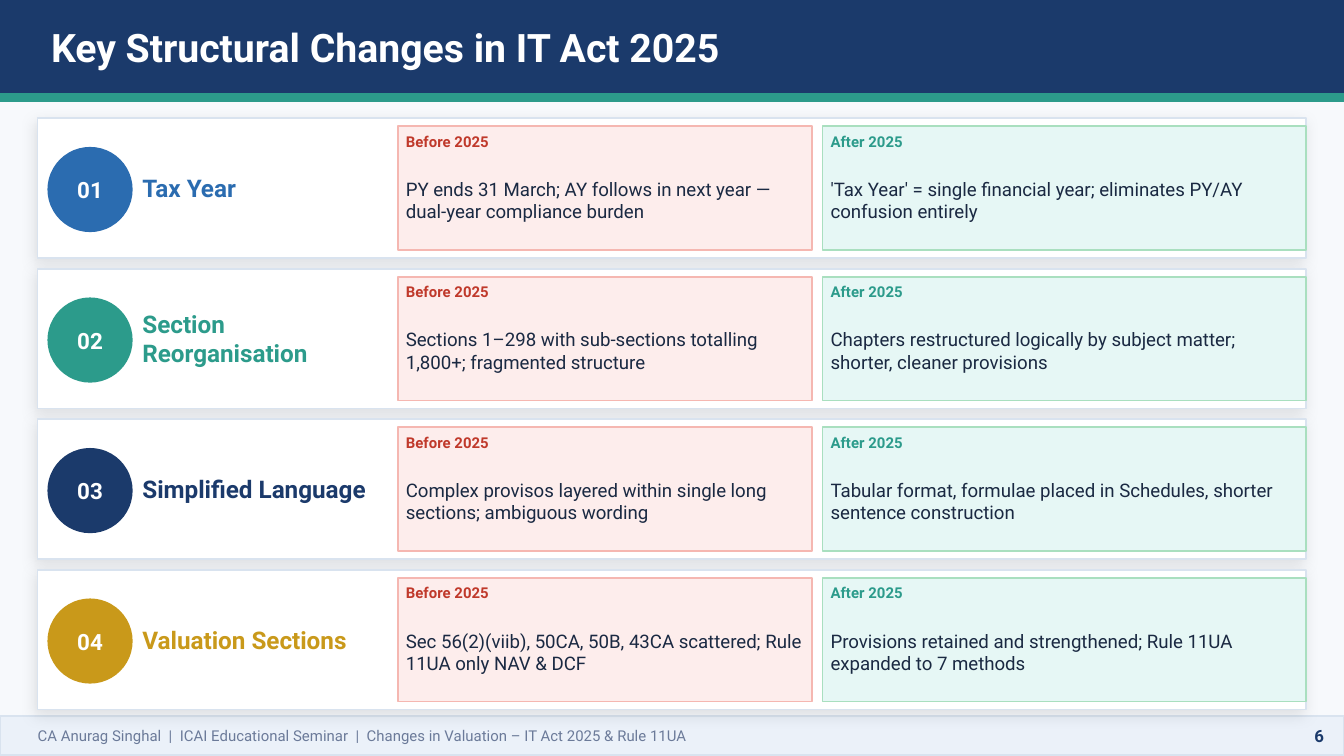
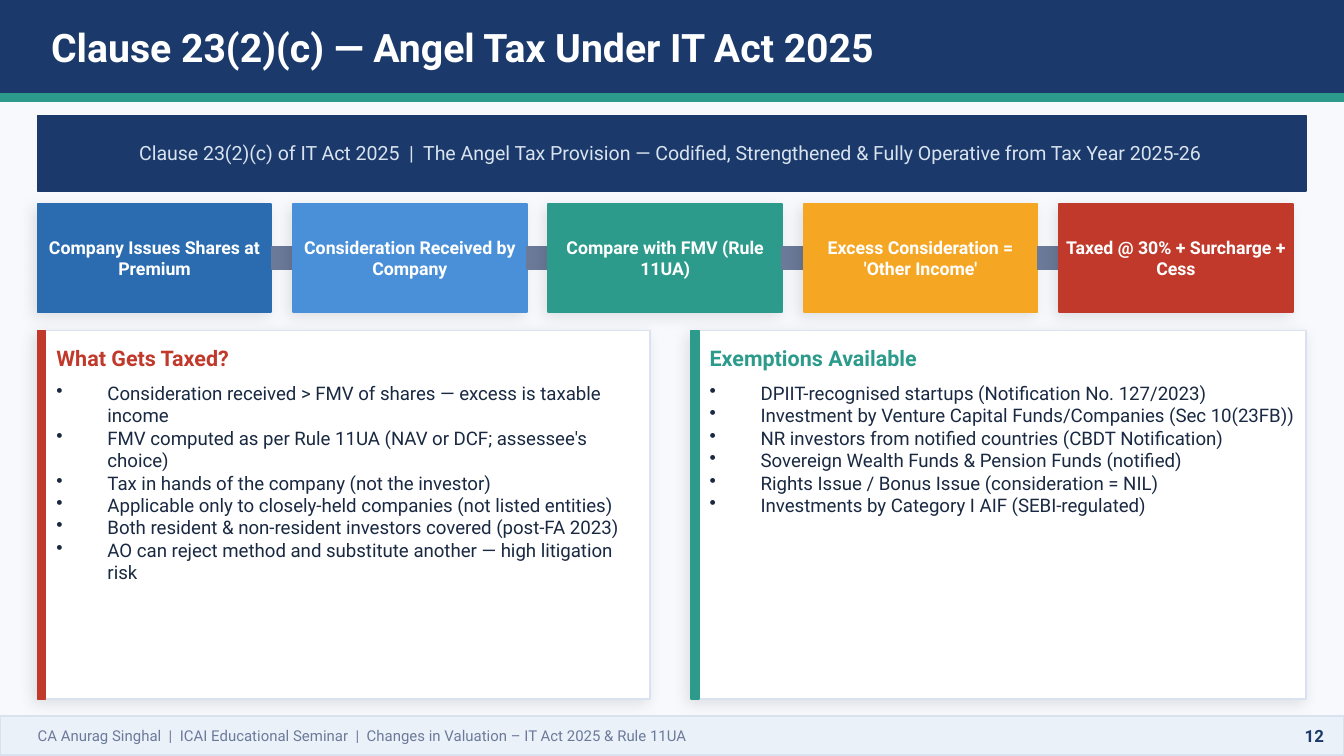
from dataclasses import dataclass

from lxml.etree import SubElement
from pptx import Presentation
from pptx.dml.color import RGBColor
from pptx.enum.shapes import MSO_SHAPE as Preset
from pptx.enum.text import MSO_ANCHOR as Anchor, PP_ALIGN as Align
from pptx.oxml.ns import qn
from pptx.util import Pt

# Shared style
FONT = "Roboto"
NAVY = RGBColor(0x1B, 0x3A, 0x6B)
BLUE = RGBColor(0x2B, 0x6C, 0xB0)
SKY = RGBColor(0x4A, 0x90, 0xD9)
TEAL = RGBColor(0x2C, 0x9B, 0x8B)
GOLD = RGBColor(0xC9, 0x99, 0x1A)
ORANGE = RGBColor(0xF5, 0xA6, 0x23)
RED = RGBColor(0xC0, 0x39, 0x2B)
INK = RGBColor(0x1A, 0x29, 0x42)
GREY = RGBColor(0x6B, 0x7A, 0x99)
BORDER = RGBColor(0xD9, 0xE3, 0xEF)
FOOTER_FILL = RGBColor(0xEB, 0xF1, 0xF9)
BACKGROUND = RGBColor(0xF7, 0xF9, 0xFC)
WHITE = RGBColor(0xFF, 0xFF, 0xFF)
PINK = RGBColor(0xFD, 0xED, 0xEC)
PINK_BORDER = RGBColor(0xF5, 0xB7, 0xB1)
MINT = RGBColor(0xE6, 0xF7, 0xF5)
MINT_BORDER = RGBColor(0xA9, 0xDF, 0xBF)

SLIDE_WIDTH, SLIDE_HEIGHT = 720, 405
MARGIN = 20.16
CONTENT_WIDTH = SLIDE_WIDTH - 2 * MARGIN
FOOTER = "CA Anurag Singhal  |  ICAI Educational Seminar  |  Changes in Valuation – IT Act 2025 & Rule 11UA"


@dataclass
class Box:
    """A rectangle in points."""
    left: float
    top: float
    width: float
    height: float

    def lengths(self) -> tuple:
        return Pt(self.left), Pt(self.top), Pt(self.width), Pt(self.height)


@dataclass
class Change:
    title: str
    color: RGBColor
    before: str
    after: str


@dataclass
class ComparisonColumn:
    label: str
    left: float
    width: float
    fill: RGBColor
    border: RGBColor
    color: RGBColor


@dataclass
class Step:
    text: str
    color: RGBColor


@dataclass
class ListPanel:
    title: str
    color: RGBColor
    left: float
    width: float
    items: list


CHANGES = [
    Change("Tax Year", BLUE,
           "PY ends 31 March; AY follows in next year — dual-year compliance burden",
           "'Tax Year' = single financial year; eliminates PY/AY confusion entirely"),
    Change("Section Reorganisation", TEAL,
           "Sections 1–298 with sub-sections totalling 1,800+; fragmented structure",
           "Chapters restructured logically by subject matter; shorter, cleaner provisions"),
    Change("Simplified Language", NAVY,
           "Complex provisos layered within single long sections; ambiguous wording",
           "Tabular format, formulae placed in Schedules, shorter sentence construction"),
    Change("Valuation Sections", GOLD,
           "Sec 56(2)(viib), 50CA, 50B, 43CA scattered; Rule 11UA only NAV & DCF",
           "Provisions retained and strengthened; Rule 11UA expanded to 7 methods"),
]
BEFORE = ComparisonColumn("Before 2025", 213.12, 221.76, PINK, PINK_BORDER, RED)
AFTER = ComparisonColumn("After 2025", 440.64, 259.2, MINT, MINT_BORDER, TEAL)

STEPS = [
    Step("Company Issues Shares at Premium", BLUE),
    Step("Consideration Received by Company", SKY),
    Step("Compare with FMV (Rule 11UA)", TEAL),
    Step("Excess Consideration = 'Other Income'", ORANGE),
    Step("Taxed @ 30% + Surcharge + Cess", RED),
]
LIST_PANELS = [
    ListPanel("What Gets Taxed?", RED, MARGIN, 328.32, [
        "Consideration received > FMV of shares — excess is taxable income",
        "FMV computed as per Rule 11UA (NAV or DCF; assessee's choice)",
        "Tax in hands of the company (not the investor)",
        "Applicable only to closely-held companies (not listed entities)",
        "Both resident & non-resident investors covered (post-FA 2023)",
        "AO can reject method and substitute another — high litigation risk",
    ]),
    ListPanel("Exemptions Available", TEAL, 370.08, 329.76, [
        "DPIIT-recognised startups (Notification No. 127/2023)",
        "Investment by Venture Capital Funds/Companies (Sec 10(23FB))",
        "NR investors from notified countries (CBDT Notification)",
        "Sovereign Wealth Funds & Pension Funds (notified)",
        "Rights Issue / Bonus Issue (consideration = NIL)",
        "Investments by Category I AIF (SEBI-regulated)",
    ]),
]


def add_soft_shadow(shape) -> None:
    effects = shape._element.spPr.find(qn("a:effectLst"))
    shadow = SubElement(effects, qn("a:outerShdw"), blurRad=str(Pt(8)), dist=str(Pt(3)),
                        dir=str(135 * 60000), algn="bl", rotWithShape="0")
    color = SubElement(shadow, qn("a:srgbClr"), val="000000")
    SubElement(color, qn("a:alpha"), val="10000")


def add_block(slide, box: Box, fill: RGBColor, border: RGBColor | None = None,
              preset=Preset.RECTANGLE, shadow: bool = False) -> None:
    shape = slide.shapes.add_shape(preset, *box.lengths())
    shape.fill.solid()
    shape.fill.fore_color.rgb = fill
    shape.line.color.rgb = border or fill
    shape.line.width = Pt(1)
    shape.shadow.inherit = False
    if shadow:
        add_soft_shadow(shape)


def add_bullet(paragraph, indent: float = 27.36) -> None:
    properties = paragraph._p.get_or_add_pPr()
    properties.set("marL", str(Pt(indent)))
    properties.set("indent", str(-Pt(indent)))
    SubElement(properties, qn("a:buChar"), char="•")


def add_text(slide, box: Box, *lines: str, size: float, color: RGBColor, bold: bool = False,
             align=Align.LEFT, anchor=Anchor.MIDDLE, bullets: bool = False) -> None:
    frame = slide.shapes.add_textbox(*box.lengths()).text_frame
    frame.word_wrap = True
    frame.vertical_anchor = anchor
    frame.margin_left = frame.margin_top = frame.margin_right = frame.margin_bottom = 0
    for index, line in enumerate(lines):
        paragraph = frame.add_paragraph() if index else frame.paragraphs[0]
        paragraph.alignment = align
        if bullets:
            add_bullet(paragraph)
        run = paragraph.add_run()
        run.text = line
        run.font.name = FONT
        run.font.size = Pt(size)
        run.font.bold = bold
        run.font.color.rgb = color


def add_base_slide(presentation, title: str, number: int):
    """Background, title band and footer shared by every slide."""
    slide = presentation.slides.add_slide(presentation.slide_layouts[6])
    slide.background.fill.solid()
    slide.background.fill.fore_color.rgb = BACKGROUND
    add_block(slide, Box(0, 0, SLIDE_WIDTH, 50.4), NAVY)
    add_block(slide, Box(0, 50.4, SLIDE_WIDTH, 3.6), TEAL)
    add_text(slide, Box(27.36, 0, 518.4, 50.4), title, size=21, color=WHITE, bold=True)
    top, height = 383.76, 20.88
    add_block(slide, Box(0, top, SLIDE_WIDTH, height), FOOTER_FILL, BORDER)
    add_text(slide, Box(MARGIN, top, 633.6, height), FOOTER, size=8, color=GREY)
    add_text(slide, Box(669.6, top, 39.6, height), str(number), size=9, color=NAVY,
             bold=True, align=Align.RIGHT)
    return slide


def draw_comparison(slide, column: ComparisonColumn, top: float, text: str) -> None:
    padding = 4.32
    left, width = column.left + padding, column.width - 2 * padding
    add_block(slide, Box(column.left, top, column.width, 66.24), column.fill, column.border)
    add_text(slide, Box(left, top, width, 15.84), column.label, size=8,
             color=column.color, bold=True)
    add_text(slide, Box(left, top + 14.4, width, 50.4), text, size=10, color=INK)


def draw_change(slide, index: int, change: Change) -> None:
    top = 63.36 + index * 80.64
    add_block(slide, Box(MARGIN, top, CONTENT_WIDTH, 74.88), WHITE, BORDER, shadow=True)
    badge = Box(25.92, top + 15.84, 44.64, 44.64)
    add_block(slide, badge, change.color, preset=Preset.OVAL)
    add_text(slide, badge, f"{index + 1:02}", size=12, color=WHITE, bold=True, align=Align.CENTER)
    inner_top = top + 4.32
    add_text(slide, Box(76.32, inner_top, 131.04, 66.24), change.title, size=13,
             color=change.color, bold=True)
    draw_comparison(slide, BEFORE, inner_top, change.before)
    draw_comparison(slide, AFTER, inner_top, change.after)


def draw_steps(slide) -> None:
    top, width, height, gap = 109.44, 125.28, 57.6, 11.52
    for index, step in enumerate(STEPS):
        box = Box(MARGIN + index * (width + gap), top, width, height)
        if index:
            add_block(slide, Box(box.left - gap, top + (height - gap) / 2, gap, gap), GREY)
        add_block(slide, box, step.color, shadow=True)
        add_text(slide, box, step.text, size=9.5, color=WHITE, bold=True, align=Align.CENTER)


def draw_list_panel(slide, panel: ListPanel) -> None:
    top, height = 177.12, 197.28
    left, width = panel.left + 10.08, panel.width - 15.84
    add_block(slide, Box(panel.left, top, panel.width, height), WHITE, BORDER, shadow=True)
    add_block(slide, Box(panel.left, top, 4.32, height), panel.color)
    add_text(slide, Box(left, top + 4.32, width, 20.16), panel.title, size=11.5,
             color=panel.color, bold=True)
    add_text(slide, Box(left, top + 27.36, width, 164.16), *panel.items, size=10,
             color=INK, anchor=Anchor.TOP, bullets=True)


def main() -> None:
    presentation = Presentation()
    presentation.slide_width, presentation.slide_height = Pt(SLIDE_WIDTH), Pt(SLIDE_HEIGHT)

    # Structural changes
    slide = add_base_slide(presentation, "Key Structural Changes in IT Act 2025", 6)
    for index, change in enumerate(CHANGES):
        draw_change(slide, index, change)

    # Angel tax
    slide = add_base_slide(presentation, "Clause 23(2)(c) — Angel Tax Under IT Act 2025", 12)
    add_block(slide, Box(MARGIN, 61.92, CONTENT_WIDTH, 40.32), NAVY)
    add_text(slide, Box(33.12, 61.92, 652.32, 40.32),
             "Clause 23(2)(c) of IT Act 2025  |  The Angel Tax Provision — Codified, "
             "Strengthened & Fully Operative from Tax Year 2025-26",
             size=10.5, color=BORDER, align=Align.CENTER)
    draw_steps(slide)
    for panel in LIST_PANELS:
        draw_list_panel(slide, panel)

    presentation.save("out.pptx")


if __name__ == "__main__":
    main()
